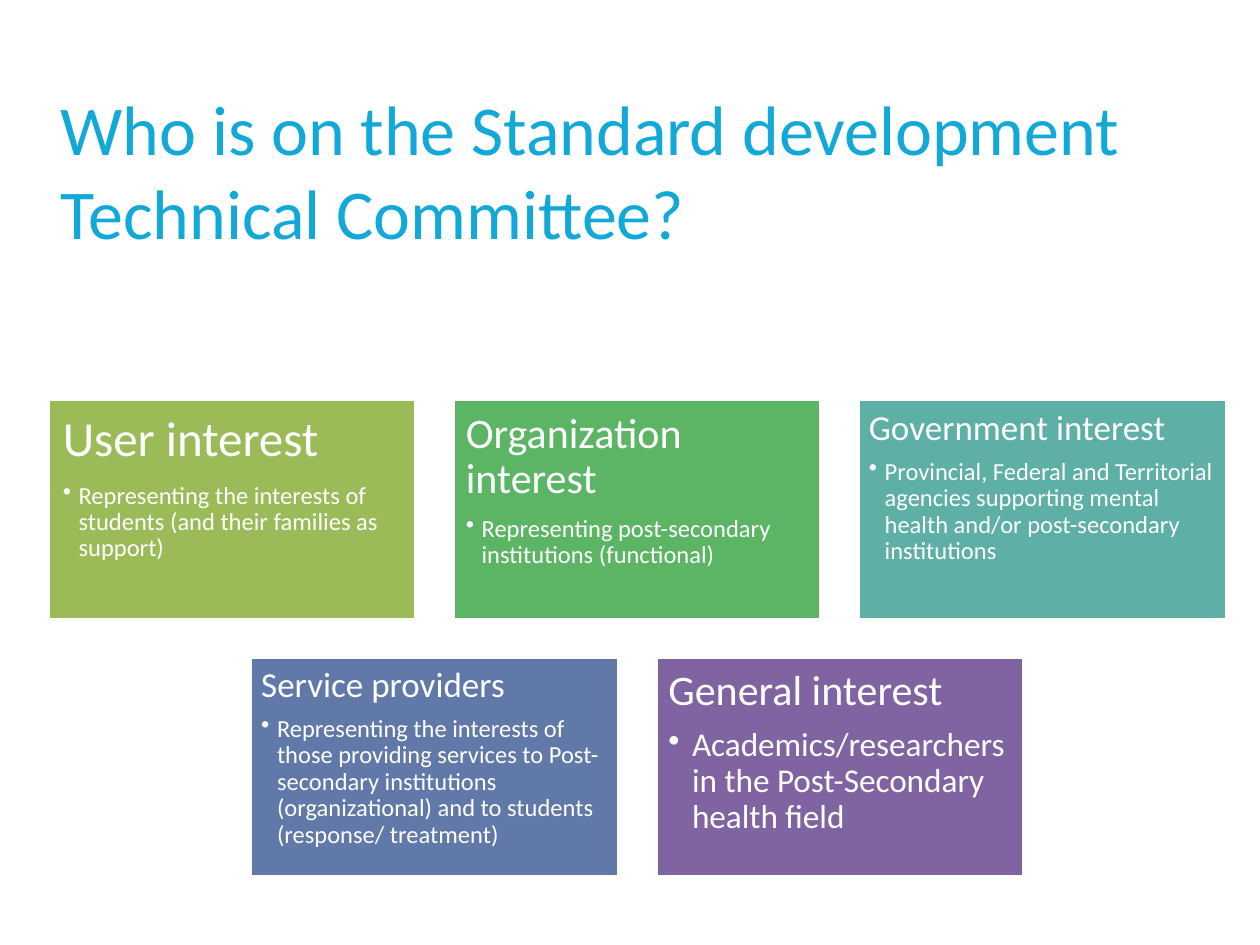
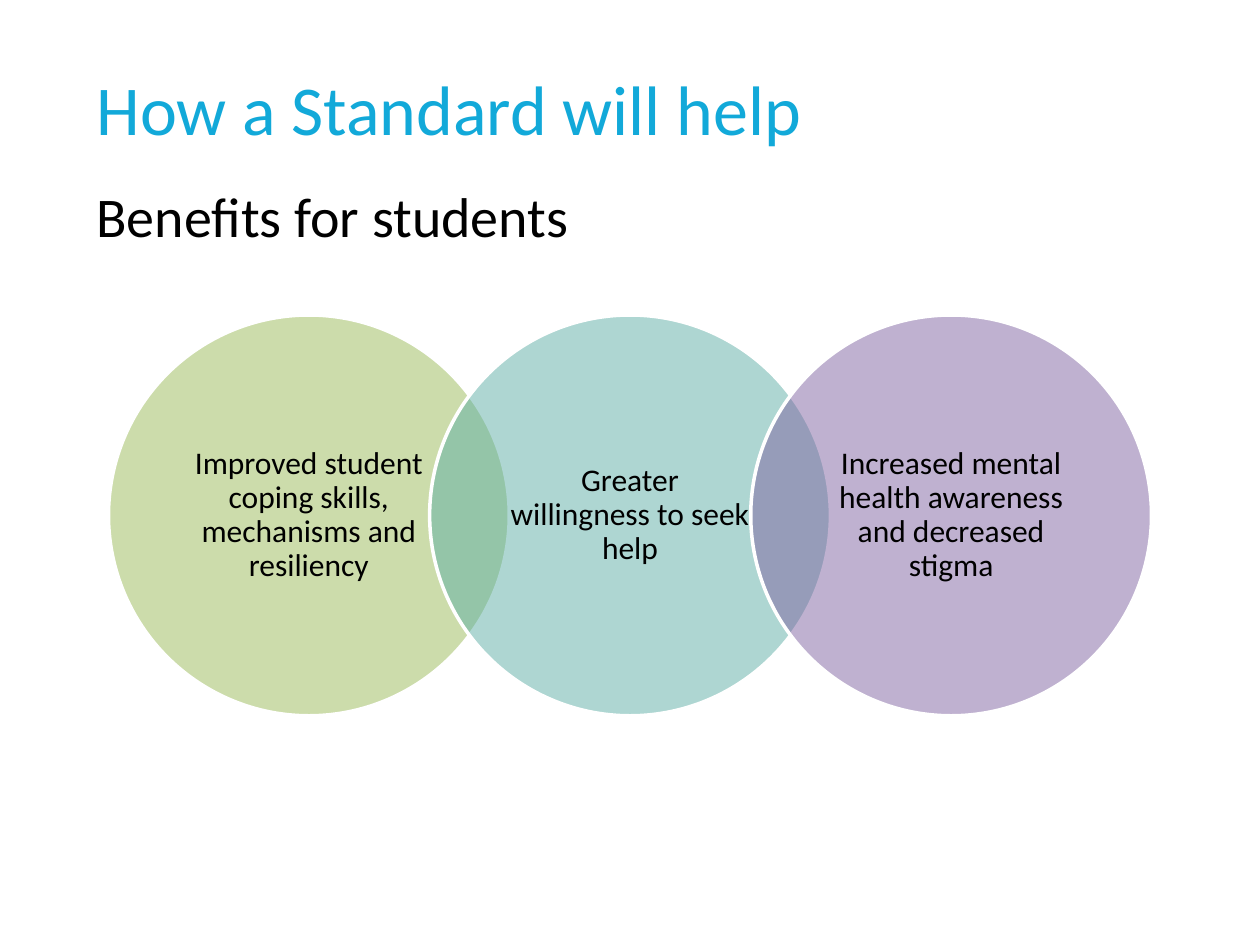
from lxml import etree
from pptx import Presentation
from pptx.dml.color import RGBColor
from pptx.enum.shapes import MSO_SHAPE
from pptx.enum.text import MSO_ANCHOR, MSO_AUTO_SIZE, PP_ALIGN
from pptx.oxml.ns import qn
from pptx.util import Pt

RECTANGLE, OVAL = MSO_SHAPE.RECTANGLE, MSO_SHAPE.OVAL
TOP, MIDDLE = MSO_ANCHOR.TOP, MSO_ANCHOR.MIDDLE
LEFT, CENTER = PP_ALIGN.LEFT, PP_ALIGN.CENTER
NO_AUTOFIT = MSO_AUTO_SIZE.NONE
TITLE_ONLY = 5

FONT = "Calibri"
COLORS = {
    "title": "12A9D9",
    "black": "000000",
    "white": "FFFFFF",
    "olive": "9BBB59",
    "green": "5CB565",
    "teal": "5EAFA6",
    "blue": "6179A8",
    "purple": "8064A2",
}

# Heading, heading size, description, description size, fill
INTERESTS = [
    ("User interest", 28,
     "Representing the interests of students (and their families as support)",
     14, "olive"),
    ("Organization interest", 24,
     "Representing post-secondary institutions (functional)", 14, "green"),
    ("Government interest", 20,
     "Provincial, Federal and Territorial agencies supporting mental health "
     "and/or post-secondary institutions", 14, "teal"),
    ("Service providers", 20,
     "Representing the interests of those providing services to "
     "Post-secondary institutions (organizational) and to students "
     "(response/ treatment)", 14, "blue"),
    ("General interest", 24,
     "Academics/researchers in the Post-Secondary health field", 19, "purple"),
]
BENEFITS = [
    ("Improved student coping skills, mechanisms and resiliency", "olive"),
    ("Greater willingness to seek help", "teal"),
    ("Increased mental health awareness and decreased stigma", "purple"),
]


def rgb(name):
    return RGBColor.from_string(COLORS[name])


class Builder:
    """Holds the shared style and the slide being filled."""

    def __init__(self, deck):
        self.deck = deck
        self.page = None

    def add_page(self, title, left, top, width, height):
        layout = self.deck.slide_layouts[TITLE_ONLY]
        self.page = self.deck.slides.add_slide(layout)
        box = self.page.shapes.title
        box.left, box.top, box.width, box.height = map(
            Pt, (left, top, width, height))
        frame = box.text_frame
        frame.auto_size = NO_AUTOFIT
        frame.vertical_anchor = TOP
        self.set_text(frame.paragraphs[0], title, 40, "title")

    def set_text(self, para, text, size, color, align=LEFT):
        para.text = text
        para.alignment = align
        para.font.name = FONT
        para.font.size = Pt(size)
        para.font.color.rgb = rgb(color)

    def add_label(self, text, size, left, top, width, height):
        box = self.page.shapes.add_textbox(*map(Pt, (left, top, width, height)))
        box.text_frame.word_wrap = False
        self.set_text(box.text_frame.paragraphs[0], text, size, "black")

    def add_panel(self, kind, fill, left, top, width, height, insets, anchor):
        """Add a filled, white-edged shape; insets are horizontal, vertical."""
        panel = self.page.shapes.add_shape(
            kind, *map(Pt, (left, top, width, height)))
        panel.shadow.inherit = False
        panel.fill.solid()
        panel.fill.fore_color.rgb = rgb(fill)
        panel.line.color.rgb = rgb("white")
        panel.line.width = Pt(2)
        frame = panel.text_frame
        frame.word_wrap = True
        frame.vertical_anchor = anchor
        frame.margin_left = frame.margin_right = Pt(insets[0])
        frame.margin_top = frame.margin_bottom = Pt(insets[1])
        return panel

    def add_card(self, left, top, width, height, interest):
        heading, heading_size, text, text_size, fill = interest
        inset = heading_size * 0.3
        card = self.add_panel(RECTANGLE, fill, left, top, width, height,
                              (inset, inset), TOP)
        frame = card.text_frame
        para = frame.paragraphs[0]
        para.line_spacing = 0.9
        para.space_after = Pt(heading_size * 0.32)
        self.set_text(para, heading, heading_size, "white")

        para = frame.add_paragraph()
        para.level = 1
        para.line_spacing = 0.9
        self.add_bullet(para, 9 if text_size < 16 else 13.5)
        self.set_text(para, text, text_size, "white")

    def add_bullet(self, para, indent):
        props = para._p.get_or_add_pPr()
        props.set("marL", str(Pt(indent)))
        props.set("indent", str(-Pt(indent)))
        etree.SubElement(props, qn("a:buChar")).set("char", "•")

    def add_circle(self, left, top, diameter, text, fill):
        circle = self.add_panel(OVAL, fill, left, top, diameter, diameter,
                                (12.5, 2), MIDDLE)
        color = circle._element.spPr.find(
            f"{qn('a:solidFill')}/{qn('a:srgbClr')}")
        etree.SubElement(color, qn("a:alpha")).set("val", "50000")
        para = circle.text_frame.paragraphs[0]
        para.line_spacing = 0.9
        self.set_text(para, text, 18, "black", CENTER)


def add_committee(builder):
    builder.add_page("Who is on the Standard development Technical Committee?",
                     27.4, 45.4, 659, 57)
    columns, pitch_x, pitch_y = 3, 231.5, 147
    for index, interest in enumerate(INTERESTS):
        row, column = divmod(index, columns)
        left = 27.5 + (column + row / 2) * pitch_x
        builder.add_card(left, 228.3 + row * pitch_y, 210.3, 126, interest)


def add_benefits(builder):
    builder.add_page("How a Standard will help", 48, 33.8, 518, 67)
    builder.add_label("Benefits for students", 32, 48, 100, 287, 46)
    for index, (text, fill) in enumerate(BENEFITS):
        builder.add_circle(62 + index * 183.5, 180, 229, text, fill)


def main():
    deck = Presentation()
    deck.slide_width, deck.slide_height = Pt(720), Pt(540)
    builder = Builder(deck)
    add_committee(builder)
    add_benefits(builder)
    deck.save("out.pptx")


if __name__ == "__main__":
    main()
